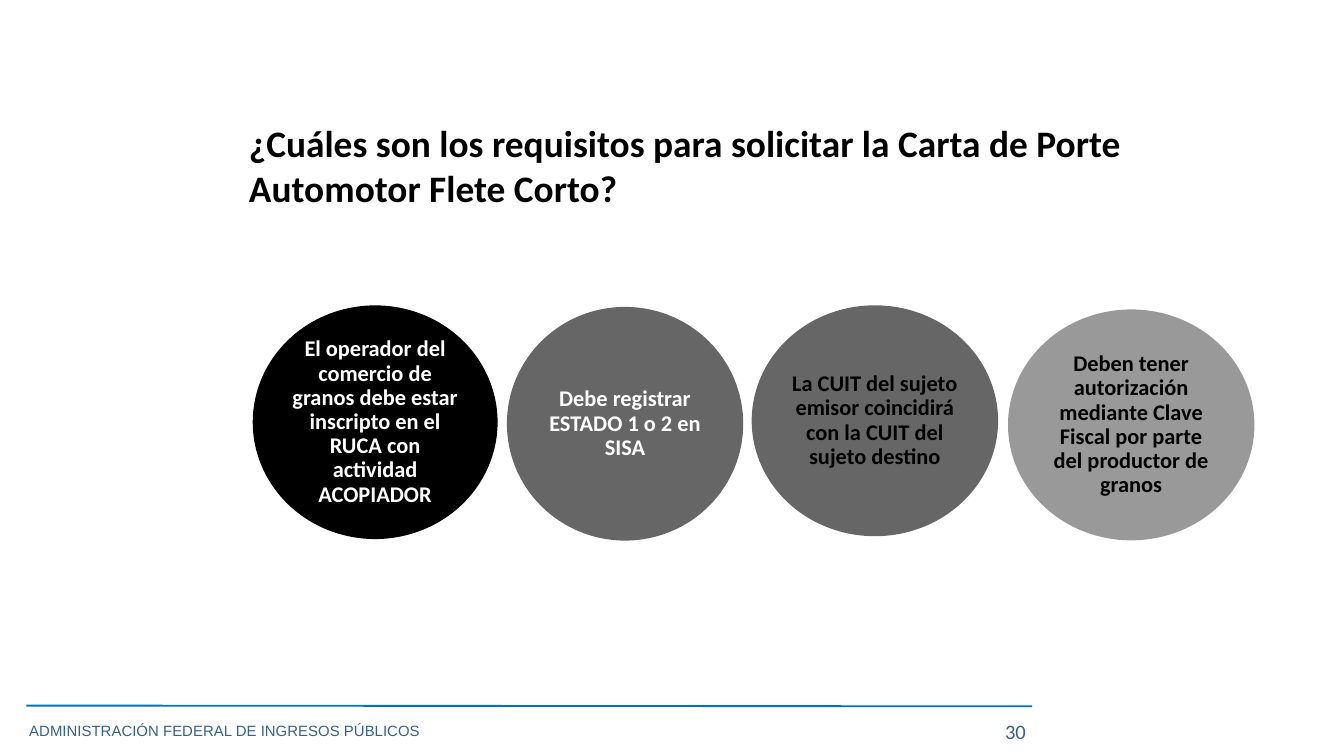
from lxml import etree
from pptx import Presentation
from pptx.dml.color import RGBColor
from pptx.enum.shapes import MSO_CONNECTOR as LINE, MSO_SHAPE as SHAPE
from pptx.enum.text import MSO_ANCHOR as ANCHOR, PP_ALIGN as ALIGN
from pptx.oxml.ns import qn
from pptx.util import Pt

BLACK = RGBColor(0x00, 0x00, 0x00)
WHITE = RGBColor(0xFF, 0xFF, 0xFF)
DARK_GREY = RGBColor(0x66, 0x66, 0x66)
LIGHT_GREY = RGBColor(0x99, 0x99, 0x99)
NAVY = RGBColor(0x37, 0x60, 0x92)
BLUE = RGBColor(0x00, 0x70, 0xC0)


class Deck:
    """Style and current slide."""
    font = "Calibri"

    def __init__(self, width, height):
        self.prs = Presentation()
        self.prs.slide_width, self.prs.slide_height = Pt(width), Pt(height)
        self.s = self.prs.slides.add_slide(self.prs.slide_layouts[6])

    def fill_text(self, sp, text, size, color, inset, bold=False, align=ALIGN.LEFT, font=None):
        tf = sp.text_frame
        tf.word_wrap = True
        tf.margin_left = tf.margin_right = Pt(inset[0])
        tf.margin_top = tf.margin_bottom = Pt(inset[1])
        p = tf.paragraphs[0]
        p.text = text
        p.alignment = align
        p.font.name, p.font.size = font or self.font, Pt(size)
        p.font.bold, p.font.color.rgb = bold, color
        return p

    def text(self, box, text, size, color, inset=(7.2, 3.6), **style):
        sp = self.s.shapes.add_textbox(*map(Pt, box))
        self.fill_text(sp, text, size, color, inset, **style)

    def line(self, x1, y1, x2, y2, color, width):
        sp = self.s.shapes.add_connector(LINE.STRAIGHT, Pt(x1), Pt(y1), Pt(x2), Pt(y2))
        sp.line.color.rgb, sp.line.width = color, Pt(width)
        etree.SubElement(sp._element.spPr, qn("a:effectLst"))

    def oval(self, box, text, fill, color):
        sp = self.s.shapes.add_shape(SHAPE.OVAL, *map(Pt, box))
        sp.shadow.inherit = False
        sp.fill.solid()
        sp.fill.fore_color.rgb = fill
        sp.line.fill.background()
        sp.text_frame.vertical_anchor = ANCHOR.MIDDLE
        p = self.fill_text(sp, text, 12, color, (1, 1), bold=True, align=ALIGN.CENTER)
        p.line_spacing, p.space_after = 0.9, Pt(4.2)


def main():
    deck = Deck(720, 405)

    # Footer
    deck.text((513.4, 381.6, 61.2, 21.6), "30", 11, NAVY, align=ALIGN.CENTER)
    deck.text((8.6, 383, 266.4, 17.3), "ADMINISTRACIÓN FEDERAL DE INGRESOS PÚBLICOS",
              8, NAVY, font="Arial")
    deck.line(14.2, 378, 553, 378.4, BLUE, 1)

    # Title
    deck.text((128.2, 61.9, 487.4, 54),
              "¿Cuáles son los requisitos para solicitar la Carta de Porte "
              "Automotor Flete Corto?", 20, BLACK, inset=(5.2, 2.6), bold=True)

    # Requirements
    requirements = [
        ((135.4, 163.6, 131.2, 125.2), BLACK, WHITE,
         "El operador del comercio de granos debe estar inscripto en el RUCA "
         "con actividad ACOPIADOR"),
        ((271.6, 164.4, 126.6, 125.2), DARK_GREY, WHITE,
         "Debe registrar ESTADO 1 o 2 en SISA"),
        ((402.7, 163.6, 132, 123.7), DARK_GREY, BLACK,
         "La CUIT del sujeto emisor coincidirá con la CUIT del sujeto destino"),
        ((540, 165.8, 132, 123.7), LIGHT_GREY, BLACK,
         "Deben tener autorización mediante Clave Fiscal por parte del productor de granos"),
    ]
    for box, fill, color, text in requirements:
        deck.oval(box, text, fill, color)

    deck.prs.save("out.pptx")


if __name__ == "__main__":
    main()
